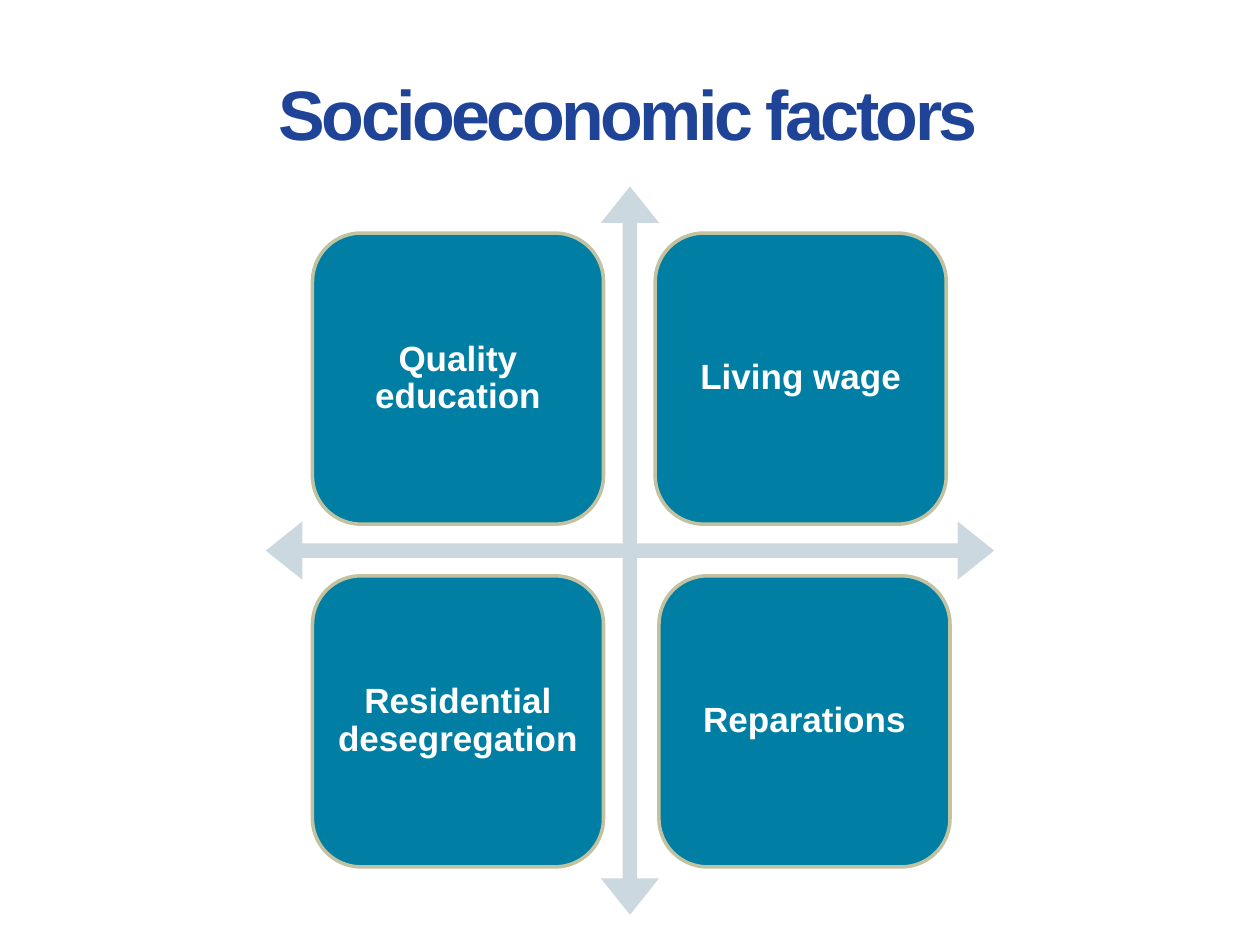
from pptx import Presentation
from pptx import util as u
from pptx.dml.color import RGBColor
from pptx.enum import shapes, text

NAVY = RGBColor(0x1F, 0x43, 0x97)
TEAL = RGBColor(0x00, 0x7E, 0xA3)
SAND = RGBColor(0xC2, 0xC2, 0xA0)
MIST = RGBColor(0xCC, 0xD8, 0xE0)
WHITE = RGBColor(0xFF, 0xFF, 0xFF)

TILE = 2.31
# Label, left and top relative to the arrows' box
TILES = [
    ("Quality education", 0.37, 0.37),
    ("Living wage", 3.09, 0.37),
    ("Residential desegregation", 0.37, 3.09),
    ("Reparations", 3.12, 3.09),
]


def add_text(sp, content, size, color, anchor, line_spacing, insets, tracking=None):
    """Write one centred bold paragraph; insets are (horizontal, vertical) inches."""
    tf = sp.text_frame
    tf.word_wrap = True
    tf.vertical_anchor = anchor
    tf.margin_left = tf.margin_right = u.Inches(insets[0])
    tf.margin_top = tf.margin_bottom = u.Inches(insets[1])
    p = tf.paragraphs[0]
    p.alignment = text.PP_ALIGN.CENTER
    p.line_spacing = line_spacing
    r = p.add_run()
    r.text = content
    r.font.name = "Arial"
    r.font.size = u.Pt(size)
    r.font.bold = True
    r.font.color.rgb = color
    if tracking is not None:
        r.font._element.set("spc", str(tracking * 100))
    return p


def add_title(s, left, top, width, height):
    sp = s.shapes.add_textbox(*map(u.Inches, (left, top, width, height)))
    p = add_text(sp, "Socioeconomic factors ", 40, NAVY, text.MSO_ANCHOR.BOTTOM,
                 0.8, (0.07, 0.04), tracking=-2)
    p._p.get_or_add_pPr().set("marL", str(u.Inches(0.1)))


def add_filled_shape(s, kind, left, top, size, fill):
    sp = s.shapes.add_shape(kind, *map(u.Inches, (left, top, size, size)))
    sp.shadow.inherit = False
    sp.fill.solid()
    sp.fill.fore_color.rgb = fill
    return sp


def add_matrix(s, left, top, size):
    """Place four labelled tiles between the arms of a four-way arrow."""
    arrows = add_filled_shape(s, shapes.MSO_SHAPE.QUAD_ARROW, left, top, size, MIST)
    arrows.line.fill.background()
    for i, value in enumerate((0.02, 0.04, 0.05)):
        arrows.adjustments[i] = value
    for label, dx, dy in TILES:
        tile = add_filled_shape(s, shapes.MSO_SHAPE.ROUNDED_RECTANGLE,
                                left + dx, top + dy, TILE, TEAL)
        tile.line.color.rgb = SAND
        tile.line.width = u.Pt(2)
        add_text(tile, label, 20, WHITE, text.MSO_ANCHOR.MIDDLE, 0.9, (0.08, 0.08))


def main():
    prs = Presentation()
    prs.slide_width, prs.slide_height = u.Inches(10), u.Inches(7.5)
    s = prs.slides.add_slide(prs.slide_layouts[6])
    add_matrix(s, 2.11, 1.48, 5.78)
    add_title(s, 0.08, 0.57, 9.84, 0.69)
    prs.save("out.pptx")


if __name__ == "__main__":
    main()
